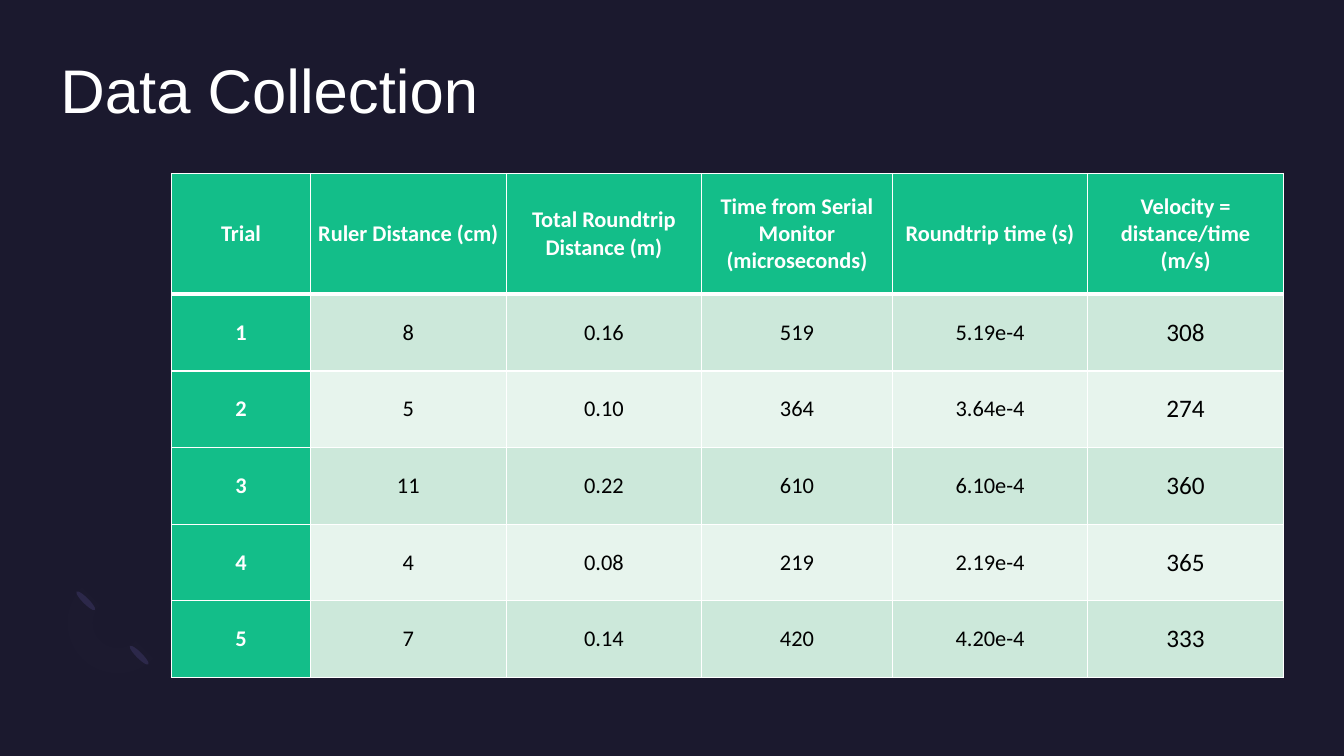
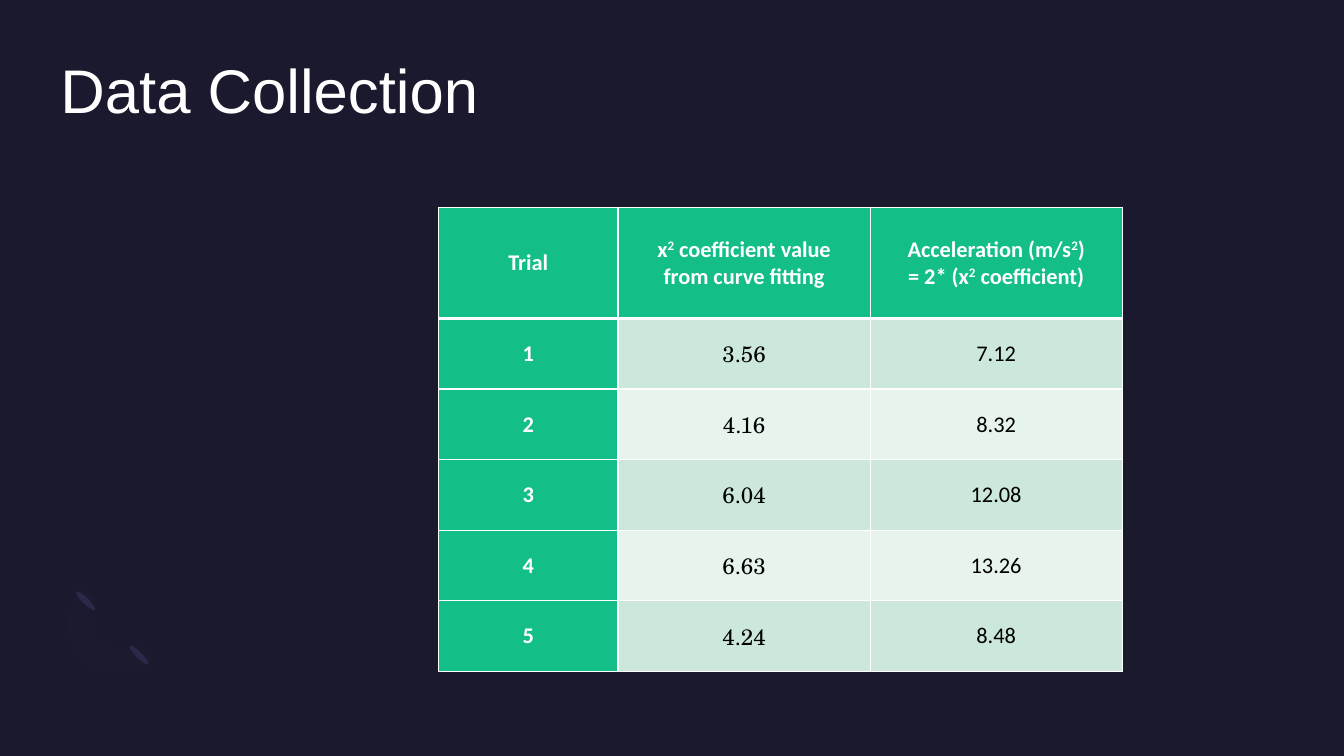
"""Build two data collection slides, each with a title and a table of trials."""
import math

from lxml import etree
from pptx import Presentation
from pptx import util as u
from pptx.dml.color import RGBColor
from pptx.enum import shapes, text
from pptx.oxml import ns

INK = {
    "back": "1B192E", "white": "FFFFFF", "black": "000000", "green": "13BE89",
    "dark": "CCE8DA", "light": "E7F4ED", "dot": "2C284A", "ring": "7771B2",
}


class Deck:
    """Hold the style and the current slide."""

    head = "Arial"
    body = "Calibri"
    serif = "TeX Gyre Schola"

    def __init__(self):
        """Start a wide deck with a dark backdrop."""
        self.prs = Presentation()
        self.prs.slide_width = u.Inches(13.33)
        self.prs.slide_height = u.Inches(7.5)
        self.paint(self.prs.slide_master.background.fill, "back")
        self.slide = None

    def paint(self, fill, ink):
        """Give a fill one solid colour."""
        fill.solid()
        fill.fore_color.rgb = RGBColor.from_string(INK[ink])

    def runs(self, para, words, size, ink, face, bold=False):
        """Add runs, raising each part that stands between bars."""
        for i, part in enumerate(words.split("|")):
            if not part:
                continue
            run = para.add_run()
            run.text = part
            font = run.font
            font.size, font.name, font.bold = u.Pt(size), face, bold
            font.color.rgb = RGBColor.from_string(INK[ink])
            if i % 2:
                run._r.get_or_add_rPr().set("baseline", "30000")

    def page(self, title):
        """Add a slide with its ornament and title."""
        self.slide = self.prs.slides.add_slide(self.prs.slide_layouts[5])
        self.ring(1.17, 6.18, 0.5, 0.25)
        for x, y in ((1.35, 6.37), (0.82, 5.83)):
            self.dot(x, y)
        box = self.slide.shapes.title
        box.left, box.top = u.Inches(0.6), u.Inches(0.6)
        box.width, box.height = u.Inches(12.13), u.Inches(1.46)
        frame = box.text_frame
        frame.margin_left = frame.margin_right = 0
        frame.margin_top = frame.margin_bottom = 0
        frame.vertical_anchor = text.MSO_ANCHOR.TOP
        frame.auto_size = text.MSO_AUTO_SIZE.NONE
        para = frame.paragraphs[0]
        para.alignment = text.PP_ALIGN.LEFT
        para.line_spacing = 0.9
        self.runs(para, title, 44, "white", self.head)

    def dot(self, x, y):
        """Add a thin slanted ellipse."""
        dot = self.slide.shapes.add_shape(
            shapes.MSO_SHAPE.OVAL, u.Inches(x), u.Inches(y), u.Inches(0.06), u.Inches(0.26))
        dot.rotation = 135
        dot.shadow.inherit = False
        self.paint(dot.fill, "dot")
        dot.line.fill.background()

    def ring(self, x, y, outer, inner):
        """Add a faint half ring that opens to the upper right."""
        turns = range(45, 226, 5)
        arcs = [(outer, a) for a in turns] + [(inner, a) for a in reversed(turns)]
        spots = [(u.Inches(x + r * math.cos(math.radians(a))),
                  u.Inches(y + r * math.sin(math.radians(a)))) for r, a in arcs]
        pen = self.slide.shapes.build_freeform(*spots[0])
        pen.add_line_segments(spots[1:], close=True)
        ring = pen.convert_to_shape()
        ring.shadow.inherit = False
        self.paint(ring.fill, "ring")
        ring.line.fill.background()
        tint = ring._element.spPr.find(".//" + ns.qn("a:srgbClr"))
        etree.SubElement(tint, ns.qn("a:alpha")).set("val", "1000")

    def edge(self, cell, top, low):
        """Draw white borders around a cell."""
        props = cell._tc.get_or_add_tcPr()
        for i, (side, size) in enumerate(zip("LRTB", (1, 1, top, low))):
            line = etree.Element(ns.qn("a:ln" + side), w=str(u.Pt(size)))
            solid = etree.SubElement(line, ns.qn("a:solidFill"))
            etree.SubElement(solid, ns.qn("a:srgbClr"), val=INK["white"])
            props.insert(i, line)

    def cell(self, cell, words, fill, **style):
        """Fill one cell with centred lines of text."""
        self.paint(cell.fill, fill)
        cell.margin_left = cell.margin_right = u.Inches(0.07)
        cell.margin_top = cell.margin_bottom = 0
        cell.vertical_anchor = text.MSO_ANCHOR.MIDDLE
        para = cell.text_frame.paragraphs[0]
        para.alignment = text.PP_ALIGN.CENTER
        for i, line in enumerate(words.split("\n")):
            if i:
                para.add_line_break()
            self.runs(para, line, **style)

    def table(self, x, y, cols, high, low, rows, special):
        """Add a table with a green head row and a green first column."""
        tall = high + low * (len(rows) - 1)
        grid = self.slide.shapes.add_table(
            len(rows), len(cols), u.Inches(x), u.Inches(y),
            u.Inches(sum(cols)), u.Inches(tall)).table
        grid.first_row = grid.horz_banding = False
        for col, wide in zip(grid.columns, cols):
            col.width = u.Inches(wide)
        for r, row in enumerate(rows):
            grid.rows[r].height = u.Inches(low if r else high)
            for c, words in enumerate(row):
                style = {"size": 16, "ink": "white", "face": self.body, "bold": True}
                fill = "green"
                if r and c:
                    fill = "dark" if r % 2 else "light"
                    style.update(ink="black", bold=False, **special.get(c, {}))
                cell = grid.cell(r, c)
                self.cell(cell, words, fill, **style)
                self.edge(cell, 3 if r == 1 else 1, 1 if r else 3)


def main():
    """Make both slides and save them."""
    deck = Deck()
    deck.page("Data Collection")
    deck.table(1.7, 1.72, [1.38, 1.94, 1.94, 1.89, 1.94, 1.94], 1.2, 0.76, [
        ["Trial", "Ruler Distance (cm)", "Total Roundtrip Distance (m)",
         "Time from Serial Monitor (microseconds)", "Roundtrip time (s)",
         "Velocity = distance/time (m/s)"],
        ["1", "8", "0.16", "519", "5.19e-4", "308"],
        ["2", "5", "0.10", "364", "3.64e-4", "274"],
        ["3", "11", "0.22", "610", "6.10e-4", "360"],
        ["4", "4", "0.08", "219", "2.19e-4", "365"],
        ["5", "7", "0.14", "420", "4.20e-4", "333"],
    ], {5: {"size": 18}})

    deck.page("Data Collection")
    deck.table(4.35, 2.06, [1.78, 2.5, 2.5], 1.1, 0.7, [
        ["Trial", "x|2| coefficient value\nfrom curve fitting",
         "Acceleration (m/s|2|)\n= 2* (x|2| coefficient)"],
        ["1", "3.56", "7.12"],
        ["2", "4.16", "8.32"],
        ["3", "6.04", "12.08"],
        ["4", "6.63", "13.26"],
        ["5", "4.24", "8.48"],
    ], {1: {"face": deck.serif}})
    deck.prs.save("out.pptx")


if __name__ == "__main__":
    main()
